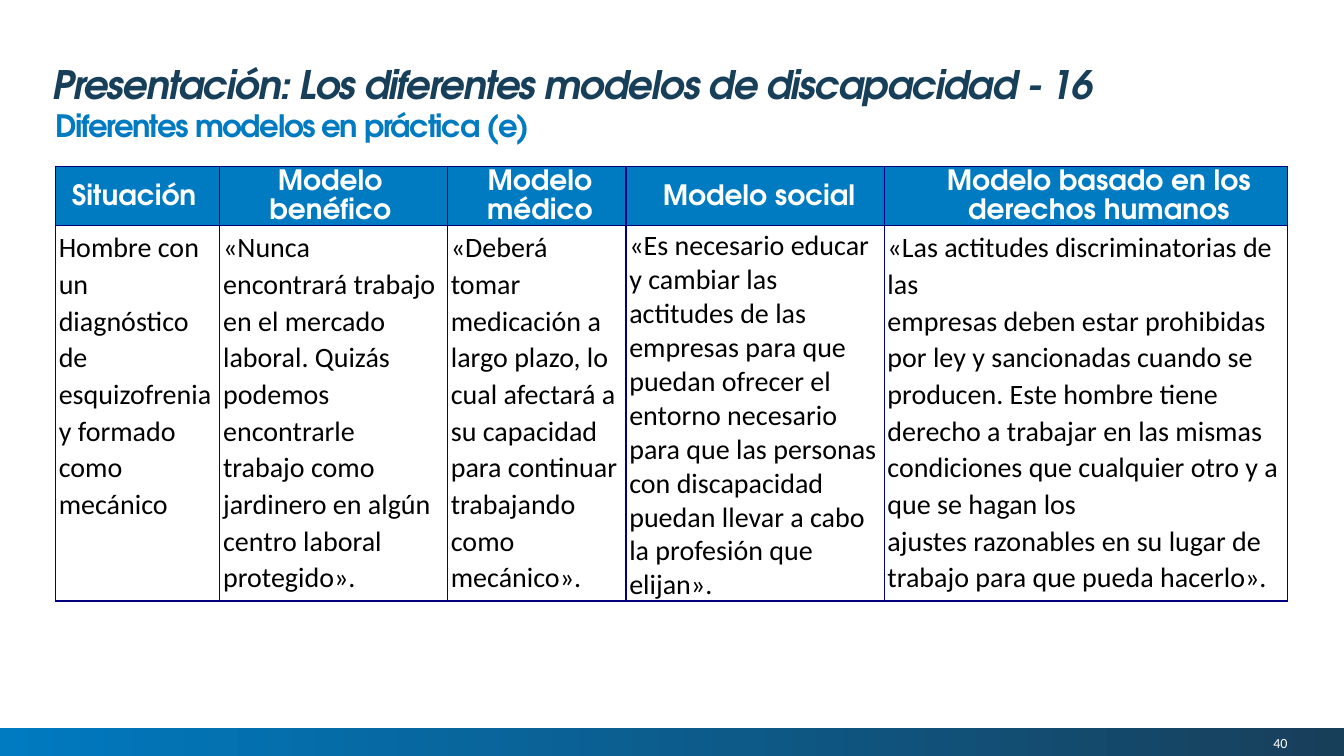
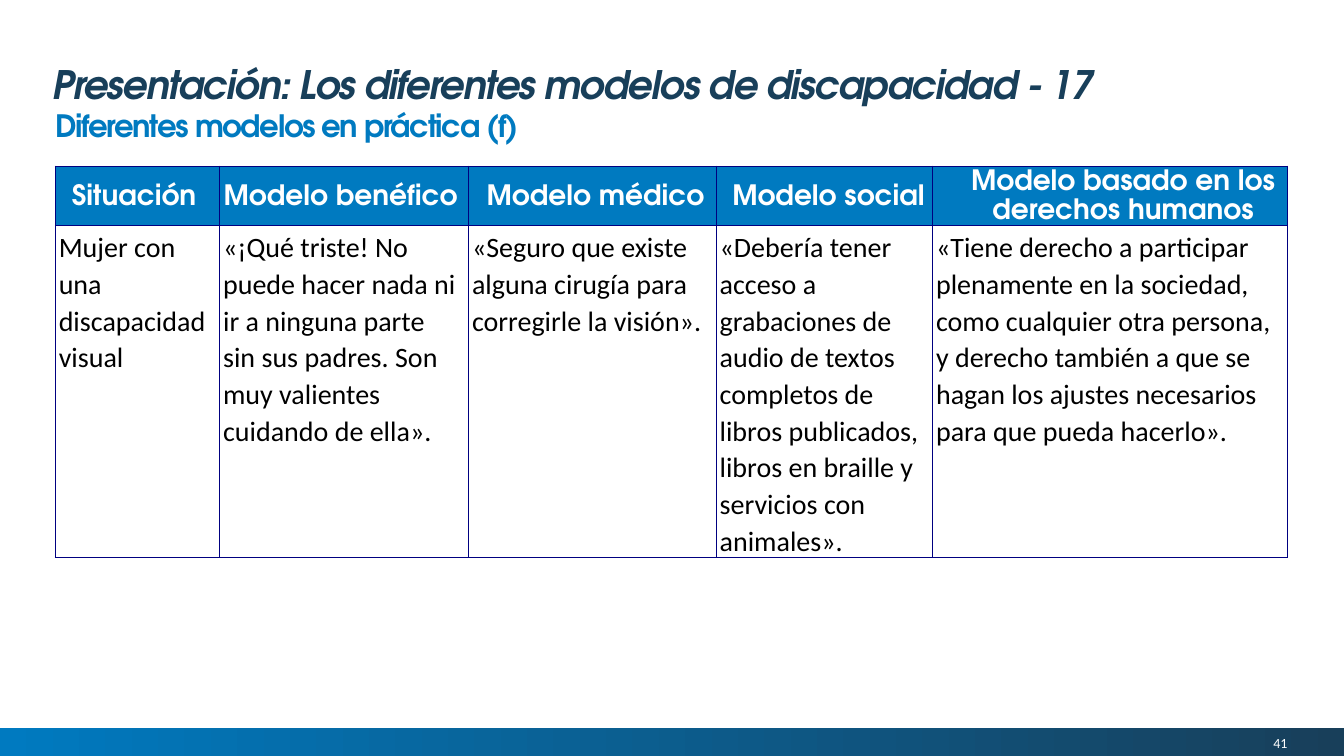
from lxml.etree import SubElement
from pptx import Presentation
from pptx.dml.color import RGBColor
from pptx.enum.shapes import MSO_SHAPE
from pptx.enum.text import MSO_ANCHOR, MSO_AUTO_SIZE, PP_ALIGN
from pptx.oxml.ns import qn
from pptx.util import Pt

BLUE, NAVY, WHITE, BLACK, BORDER = "007AC0", "183F5A", "FFFFFF", "000000", "000080"
HEADING_FONT, BODY_FONT = "TeX Gyre Adventor", "Calibri"
LEFT, CONTENT_WIDTH = 39.6, 880
HEADER_HEIGHT = 42.5
HEADERS = [
    ("Situación", 0),
    ("Modelo benéfico", 0),
    ("Modelo médico", 9.4),
    ("Modelo social", 10.8),
    ("Modelo basado en los derechos humanos", 23.8),
]

LESSONS = [
    {
        "number": 40,
        "part": 16,
        "letter": "e",
        "widths": [117.4, 162.7, 127.5, 184.4, 288],
        "spacings": [1.07, 1.07, 1.07, 0.99, 1.07],
        "height": 268,
        "answers": [
            "Hombre con un diagnóstico de esquizofrenia y formado como mecánico",
            "«Nunca encontrará trabajo en el mercado laboral. Quizás podemos "
            "encontrarle trabajo como jardinero en algún centro laboral protegido».",
            "«Deberá tomar medicación a largo plazo, lo cual afectará a su "
            "capacidad para continuar trabajando como mecánico».",
            "«Es necesario educar y cambiar las actitudes de las empresas para que "
            "puedan ofrecer el entorno necesario para que las personas con "
            "discapacidad puedan llevar a cabo la profesión que elijan».",
            "«Las actitudes discriminatorias de las\n"
            "empresas deben estar prohibidas por ley y sancionadas cuando se "
            "producen. Este hombre tiene derecho a trabajar en las mismas "
            "condiciones que cualquier otro y a que se hagan los\n"
            "ajustes razonables en su lugar de trabajo para que pueda hacerlo».",
        ],
    },
    {
        "number": 41,
        "part": 17,
        "letter": "f",
        "widths": [117.4, 177.8, 176.9, 154.6, 253.3],
        "spacings": [1.07] * 5,
        "height": 237,
        "answers": [
            "Mujer con una discapacidad visual",
            "«¡Qué triste! No puede hacer nada ni ir a ninguna parte sin sus "
            "padres. Son muy valientes cuidando de ella».",
            "«Seguro que existe alguna cirugía para corregirle la visión».",
            "«Debería tener acceso a grabaciones de audio de textos completos de "
            "libros publicados, libros en braille y servicios con animales».",
            "«Tiene derecho a participar plenamente en la sociedad, como cualquier "
            "otra persona, y derecho también a que se hagan los ajustes necesarios "
            "para que pueda hacerlo».",
        ],
    },
]


def color(hex_code):
    return RGBColor.from_string(hex_code)


def write(frame, text, size=20, font=BODY_FONT, ink=BLACK, bold=False, italic=False,
          align=PP_ALIGN.LEFT, line=1.0, indent=0, tracking=0):
    frame.word_wrap = True
    for index, content in enumerate(text.split("\n")):
        paragraph = frame.add_paragraph() if index else frame.paragraphs[0]
        paragraph.alignment = align
        paragraph.line_spacing = line
        if indent:
            paragraph._p.get_or_add_pPr().set("marL", str(Pt(indent)))
        run = paragraph.add_run()
        run.text = content
        run.font.size = Pt(size)
        run.font.name = font
        run.font.bold = bold
        run.font.italic = italic
        run.font.color.rgb = color(ink)
        if tracking:
            run._r.get_or_add_rPr().set("spc", str(int(tracking * 100)))


presentation = Presentation()
presentation.slide_width, presentation.slide_height = Pt(960), Pt(540)

for lesson in LESSONS:
    slide = presentation.slides.add_slide(presentation.slide_layouts[5])

    band = slide.shapes.add_shape(MSO_SHAPE.RECTANGLE, Pt(0), Pt(520), Pt(960), Pt(20))
    band.shadow.inherit = False
    band.line.fill.background()
    band.fill.gradient()
    band.fill.gradient_angle = 0
    for stop, shade in zip(band.fill.gradient_stops, (BLUE, NAVY)):
        stop.color.rgb = color(shade)

    title = slide.shapes.title
    title.left, title.top, title.width, title.height = Pt(30.3), Pt(40.2), Pt(771), Pt(34)
    title.text_frame.auto_size = MSO_AUTO_SIZE.NONE
    title.text_frame.vertical_anchor = MSO_ANCHOR.TOP
    write(title.text_frame,
          f"Presentación: Los diferentes modelos de discapacidad - {lesson['part']}",
          size=28, font=HEADING_FONT, ink=NAVY, bold=True, italic=True,
          line=Pt(33), tracking=-1)

    subtitle = slide.shapes.add_textbox(Pt(LEFT), Pt(74.4), Pt(CONTENT_WIDTH), Pt(28)).text_frame
    page = slide.shapes.add_textbox(Pt(790), Pt(522), Pt(129.6), Pt(17)).text_frame
    for frame, anchor in ((subtitle, MSO_ANCHOR.BOTTOM), (page, MSO_ANCHOR.MIDDLE)):
        frame.margin_left = frame.margin_top = frame.margin_right = frame.margin_bottom = 0
        frame.vertical_anchor = anchor
    write(subtitle, f"Diferentes modelos en práctica ({lesson['letter']})", size=22,
          font=HEADING_FONT, ink=BLUE, bold=True, line=Pt(33), tracking=-1)
    write(page, str(lesson["number"]), size=10, ink=WHITE, align=PP_ALIGN.RIGHT)

    models = slide.shapes.add_table(2, len(HEADERS), Pt(LEFT), Pt(118.8), Pt(CONTENT_WIDTH),
                                    Pt(HEADER_HEIGHT + lesson["height"])).table
    models.rows[0].height = Pt(HEADER_HEIGHT)
    models.rows[1].height = Pt(lesson["height"])
    columns = zip(HEADERS, lesson["answers"], lesson["widths"], lesson["spacings"])
    for column, ((header, indent), answer, width, spacing) in enumerate(columns):
        models.columns[column].width = Pt(width)
        heading, reply = models.cell(0, column), models.cell(1, column)
        for cell, margins in ((heading, (0, 0, 5, 0)), (reply, (2.4, 2.2, 5.4, 0))):
            (cell.margin_left, cell.margin_top,
             cell.margin_right, cell.margin_bottom) = map(Pt, margins)
            properties = cell._tc.get_or_add_tcPr()
            for side in ("a:lnL", "a:lnR", "a:lnT", "a:lnB"):
                edge = SubElement(properties, qn(side), w=str(Pt(1)))
                SubElement(SubElement(edge, qn("a:solidFill")), qn("a:srgbClr"), val=BORDER)
            cell.fill.solid()
        heading.fill.fore_color.rgb = color(BLUE)
        heading.vertical_anchor = MSO_ANCHOR.MIDDLE
        reply.fill.fore_color.rgb = color(WHITE)
        write(heading.text_frame, header, font=HEADING_FONT, ink=WHITE, bold=True,
              align=PP_ALIGN.CENTER, line=Pt(20.5), indent=indent)
        write(reply.text_frame, answer, line=spacing)

presentation.save("out.pptx")
